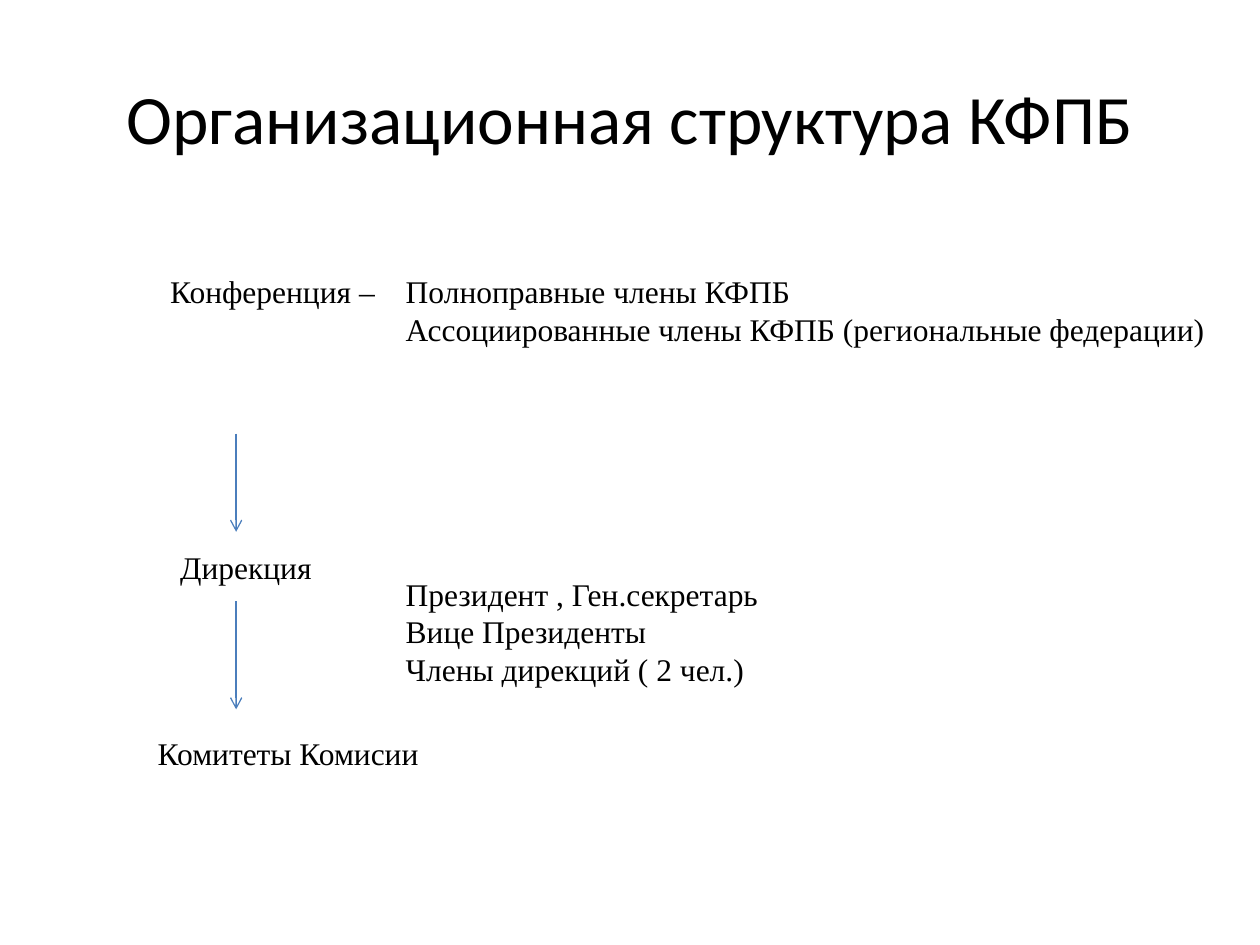
import pptx
import pptx.dml.color
import pptx.enum.shapes
import pptx.enum.text
import pptx.oxml
import pptx.oxml.ns
import pptx.util

Cm, Pt = pptx.util.Cm, pptx.util.Pt
ALIGN = pptx.enum.text.PP_ALIGN
ANCHOR = pptx.enum.text.MSO_ANCHOR


def color(hex_value):
    return pptx.dml.color.RGBColor.from_string(hex_value)


def write(tf, lines, size=18, font="Times New Roman", fill="000000",
          align=ALIGN.LEFT, anchor=ANCHOR.TOP, wrap=False):
    """Fill a text frame with one paragraph per line."""
    tf.word_wrap = wrap
    tf.vertical_anchor = anchor
    for i, line in enumerate(lines):
        p = tf.paragraphs[0] if i == 0 else tf.add_paragraph()
        p.alignment = align
        r = p.add_run()
        r.text = line
        r.font.size = Pt(size)
        r.font.name = font
        r.font.color.rgb = color(fill)


def add_text(s, x, y, w, lines):
    height = 0.25 + 0.77 * len(lines)
    box = s.shapes.add_textbox(Cm(x), Cm(y), Cm(w), Cm(height))
    write(box.text_frame, lines)


def add_down_arrow(s, x, top, bottom):
    line = s.shapes.add_connector(pptx.enum.shapes.MSO_CONNECTOR.STRAIGHT,
                                  Cm(x), Cm(top), Cm(x), Cm(bottom))
    line.line.color.rgb = color("4B7EBC")
    line.line.width = Pt(0.75)
    qn, element = pptx.oxml.ns.qn, pptx.oxml.xmlchemy.OxmlElement
    tail = element("a:tailEnd")
    tail.set("type", "arrow")
    sp_pr = line._element.find(qn("p:spPr"))
    sp_pr.find(qn("a:ln")).append(tail)
    sp_pr.append(element("a:effectLst"))


def add_title(s, x, y, w, h, text):
    sp = s.shapes.title
    sp.left, sp.top, sp.width, sp.height = Cm(x), Cm(y), Cm(w), Cm(h)
    write(sp.text_frame, [text], size=39.6, font="Calibri",
          align=ALIGN.CENTER, anchor=ANCHOR.MIDDLE, wrap=True)


def add_structure(s, x, y, w):
    """Chain of governing bodies on the left, their members on the right."""
    bodies = [(0, 0, 4.7, "Конференция –"),
              (0.2, 5.56, 3.23, "Дирекция"),
              (-0.25, 9.32, 5.8, "Комитеты Комисии")]
    for dx, dy, width, name in bodies:
        add_text(s, x + dx, y + dy, width, [name])

    members_x = 4.75
    members = [(0, ["Полноправные члены КФПБ",
                    "Ассоциированные члены КФПБ (региональные федерации)"]),
               (6.1, ["Президент , Ген.секретарь",
                      "Вице Президенты",
                      "Члены дирекций ( 2 чел.)"])]
    for dy, lines in members:
        add_text(s, x + members_x, y + dy, w - members_x, lines)

    for top, bottom in [(3.38, 5.36), (6.76, 8.94)]:
        add_down_arrow(s, x + 1.58, y + top, y + bottom)


def main():
    prs = pptx.Presentation()
    prs.slide_width, prs.slide_height = Cm(25.4), Cm(19.05)
    s = prs.slides.add_slide(prs.slide_layouts.get_by_name("Title Only"))
    add_title(s, 1.27, 0.76, 22.86, 3.18, "Организационная структура КФПБ")
    add_structure(s, 3.18, 5.36, 21.6)
    prs.save("out.pptx")


if __name__ == "__main__":
    main()
